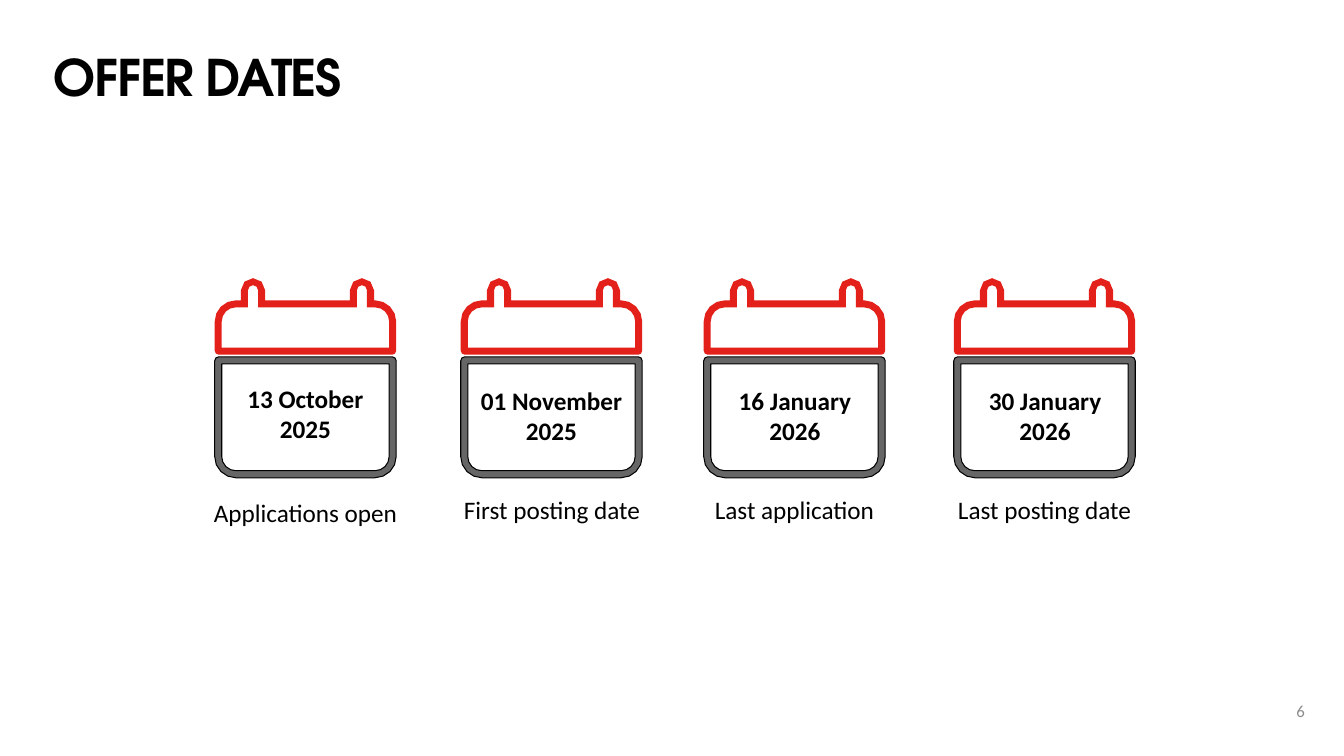
import math

import pptx
import pptx.dml.color
import pptx.enum.text
import pptx.util

PX = 9144  # EMU per px, 100 px to the inch
COLORS = {"black": "000000", "red": "E32019", "gray": "666666", "number": "8C8C8C"}
HEADING_FONT = "TeX Gyre Adventor"
BODY_FONT = "Calibri"
ALIGN = pptx.enum.text.PP_ALIGN
ANCHOR = pptx.enum.text.MSO_ANCHOR

# Calendar icon
ICON_WIDTH = 180
FRAME = 7
HEADER_BOTTOM, BODY_TOP, BODY_BOTTOM = 352, 354, 474
RAIL_TOP = 298
TAB_CENTERS, TAB_RADIUS = (38, 146), 12
BIG_CORNER, SMALL_CORNER = 21, 4

# left, date lines, date width, date top, caption, caption width, caption top
CALENDARS = [
    (213, ("13 October", "2025"), 136, 375, "Applications open", 204, 488),
    (457, ("01 November", "2025"), 162, 377, "First posting date", 197, 485),
    (698, ("16 January", "2026"), 133, 377, "Last application", 180, 485),
    (946, ("30 January", "2026"), 133, 377, "Last posting date", 194, 485),
]


def arc(center_x, center_y, radius, start, end):
    """Points along a circle, angles in degrees, clockwise on the slide."""
    if radius == 0:
        return [(center_x, center_y)]
    steps = 4 if radius > SMALL_CORNER else 2
    angles = [math.radians(start + (end - start) * i / steps) for i in range(steps + 1)]
    return [(center_x + radius * math.cos(a), center_y + radius * math.sin(a)) for a in angles]


def corner(side_x, side_y, right, bottom, size, inset):
    """Rounded corner of a frame, drawn inset from its outer edge."""
    depth = max(size, inset)
    start = {(0, 0): 180, (1, 0): 270, (1, 1): 0, (0, 1): 90}[right, bottom]
    center_x = side_x - depth if right else side_x + depth
    center_y = side_y - depth if bottom else side_y + depth
    return arc(center_x, center_y, depth - inset, start, start + 90)


def header_outline(inset):
    points = corner(0, RAIL_TOP, 0, 0, BIG_CORNER, inset)
    radius = TAB_RADIUS - inset
    for center in TAB_CENTERS:
        points.append((center - radius, RAIL_TOP + inset))
        points += arc(center, RAIL_TOP - 10, radius, 180, 360)
        points.append((center + radius, RAIL_TOP + inset))
    points += corner(ICON_WIDTH, RAIL_TOP, 1, 0, BIG_CORNER, inset)
    points += corner(ICON_WIDTH, HEADER_BOTTOM, 1, 1, SMALL_CORNER, inset)
    return points + corner(0, HEADER_BOTTOM, 0, 1, SMALL_CORNER, inset)


def body_outline(inset):
    return (corner(0, BODY_TOP, 0, 0, SMALL_CORNER, inset)
            + corner(ICON_WIDTH, BODY_TOP, 1, 0, SMALL_CORNER, inset)
            + corner(ICON_WIDTH, BODY_BOTTOM, 1, 1, BIG_CORNER, inset)
            + corner(0, BODY_BOTTOM, 0, 1, BIG_CORNER, inset))


class SlideBuilder:
    def __init__(self, slide):
        self.slide = slide

    def color(self, name):
        return pptx.dml.color.RGBColor.from_string(COLORS[name])

    def place(self, shape, left, top, width, height):
        shape.left, shape.top = left * PX, top * PX
        shape.width, shape.height = width * PX, height * PX

    def style(self, paragraph, size, color="black", bold=False, font=BODY_FONT, align=ALIGN.CENTER):
        paragraph.alignment = align
        paragraph.font.name = font
        paragraph.font.size = pptx.util.Pt(size)
        paragraph.font.bold = bold
        paragraph.font.color.rgb = self.color(color)

    def title(self, text, left, top, width, height):
        shape = self.slide.shapes.title
        self.place(shape, left, top, width, height)
        frame = shape.text_frame
        frame.text = text
        frame.margin_left = frame.margin_right = frame.margin_top = frame.margin_bottom = 0
        frame.vertical_anchor = ANCHOR.TOP
        frame.auto_size = pptx.enum.text.MSO_AUTO_SIZE.NONE
        paragraph = frame.paragraphs[0]
        paragraph.line_spacing = pptx.util.Pt(44)
        self.style(paragraph, 36, bold=True, font=HEADING_FONT, align=ALIGN.LEFT)
        # Tighter letter spacing, in hundredths of a point
        paragraph.runs[0]._r.get_or_add_rPr().set("spc", "-100")

    def text(self, lines, left, top, width, height, wrap=False, anchor=ANCHOR.TOP, **style):
        shape = self.slide.shapes.add_textbox(0, 0, 0, 0)
        self.place(shape, left, top, width, height)
        frame = shape.text_frame
        frame.text = "\n".join(lines)
        frame.word_wrap = wrap
        frame.vertical_anchor = anchor
        for paragraph in frame.paragraphs:
            self.style(paragraph, **style)

    def ring(self, left, outline, fill, line=None):
        """Filled frame between an outline and its inset."""
        outer, inner = ([((left + x) * PX, y * PX) for x, y in outline(inset)]
                        for inset in (0, FRAME))
        builder = self.slide.shapes.build_freeform(*outer[0])
        builder.add_line_segments(outer[1:], close=True)
        builder.move_to(*inner[0])
        builder.add_line_segments(inner[1:], close=True)
        shape = builder.convert_to_shape()
        shape.shadow.inherit = False
        shape.fill.solid()
        shape.fill.fore_color.rgb = self.color(fill)
        if line:
            shape.line.color.rgb = self.color(line)
            shape.line.width = pptx.util.Pt(0.75)
        else:
            shape.line.fill.background()

    def calendar(self, left, date, date_width, date_top, caption, caption_width, caption_top):
        center = left + ICON_WIDTH // 2
        self.ring(left, header_outline, "red")
        self.ring(left, body_outline, "gray", line="black")
        self.text(date, center - date_width // 2, date_top, date_width, 71, size=18, bold=True)
        self.text([caption], center - caption_width // 2, caption_top, caption_width, 40, size=18)


def main():
    presentation = pptx.Presentation()
    presentation.slide_width, presentation.slide_height = 1333 * PX, 750 * PX
    builder = SlideBuilder(presentation.slides.add_slide(presentation.slide_layouts[5]))

    # Heading
    builder.title("OFFER DATES", 53, 45, 1101, 52)

    # Dates
    for calendar in CALENDARS:
        builder.calendar(*calendar)

    # Slide number
    builder.text(["6"], 1263, 685, 41, 40, wrap=True, anchor=ANCHOR.MIDDLE,
                 size=12, color="number", align=ALIGN.RIGHT)

    presentation.save("out.pptx")


if __name__ == "__main__":
    main()
